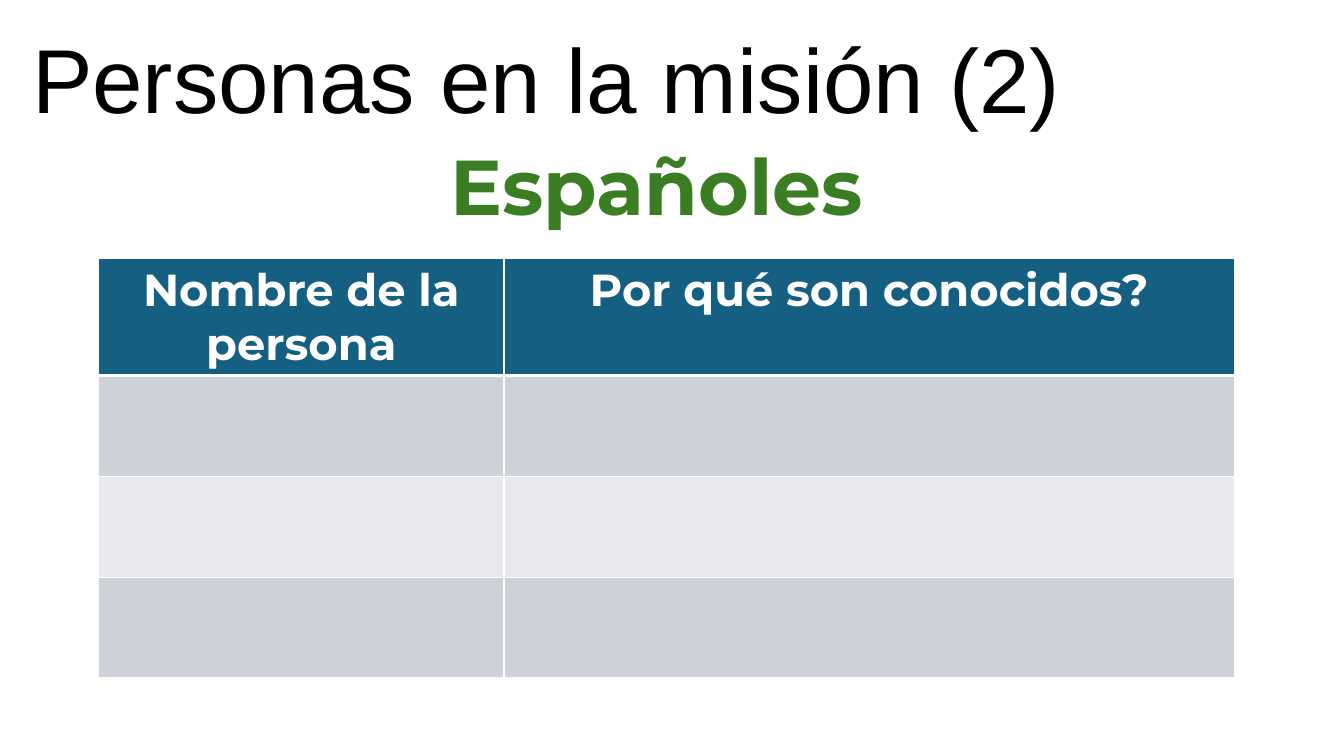
from lxml import etree
from pptx import Presentation
from pptx import util as u
from pptx.dml.color import RGBColor
from pptx.enum import text
from pptx.oxml import ns

BLACK = RGBColor(0x00, 0x00, 0x00)
WHITE = RGBColor(0xFF, 0xFF, 0xFF)
GREEN = RGBColor(0x3B, 0x7D, 0x23)
TEAL = RGBColor(0x15, 0x60, 0x82)
BANDS = (RGBColor(0xCC, 0xD2, 0xD8), RGBColor(0xE8, 0xEA, 0xED))


class SlideBuilder:
    """Holds the fonts and the current slide."""

    title_font = "Arial"
    accent_font = "Montserrat"

    def __init__(self, slide):
        self.slide = slide

    def styled_run(self, paragraph, words, font, size, color, bold=False):
        run = paragraph.add_run()
        run.text = words
        run.font.name = font
        run.font.size = u.Pt(size)
        run.font.bold = bold
        run.font.color.rgb = color

    def heading(self, words, box, font, size, color, anchor, align, spacing, bold=False):
        frame = self.slide.shapes.add_textbox(*(u.Cm(v) for v in box)).text_frame
        frame.word_wrap = True
        frame.vertical_anchor = anchor
        paragraph = frame.paragraphs[0]
        paragraph.alignment = align
        paragraph.line_spacing = spacing
        self.styled_run(paragraph, words, font, size, color, bold)
        return paragraph

    def border(self, cell, **widths):
        properties = cell._tc.get_or_add_tcPr()
        for side, width in widths.items():
            line = etree.SubElement(properties, ns.qn(f"a:ln{side}"), w=str(u.Pt(width)))
            fill = etree.SubElement(line, ns.qn("a:solidFill"))
            etree.SubElement(fill, ns.qn("a:srgbClr"), val=str(WHITE))

    def table(self, headers, left, top, widths, heights):
        grid = self.slide.shapes.add_table(
            len(heights), len(widths), u.Cm(left), u.Cm(top),
            u.Cm(sum(widths)), u.Cm(sum(heights))).table
        for column, width in zip(grid.columns, widths):
            column.width = u.Cm(width)
        for r, height in enumerate(heights):
            grid.rows[r].height = u.Cm(height)
            for cell in grid.rows[r].cells:
                # A thicker rule separates the header from the body
                self.border(cell, L=1, R=1, T=3 if r == 1 else 1, B=3 if r == 0 else 1)
                cell.fill.solid()
                cell.fill.fore_color.rgb = BANDS[(r - 1) % 2] if r else TEAL
        for cell, header in zip(grid.rows[0].cells, headers):
            paragraph = cell.text_frame.paragraphs[0]
            paragraph.alignment = text.PP_ALIGN.CENTER
            self.styled_run(paragraph, header, self.accent_font, 32, WHITE, bold=True)


def main():
    deck = Presentation()
    deck.slide_width, deck.slide_height = u.Cm(33.87), u.Cm(19.05)
    builder = SlideBuilder(deck.slides.add_slide(deck.slide_layouts[6]))

    # Title and group name
    builder.heading("Personas en la misión (2)", (0.56, 0.28, 32.87, 3.68),
                    builder.title_font, 64.8, BLACK,
                    text.MSO_ANCHOR.MIDDLE, text.PP_ALIGN.LEFT, 0.9)
    group = builder.heading("Españoles", (9.35, 3.63, 14.4, 2.29),
                            builder.accent_font, 55.5, GREEN,
                            text.MSO_ANCHOR.BOTTOM, text.PP_ALIGN.CENTER, 0.8, bold=True)
    group.space_before = u.Pt(10)

    # Table to fill in
    builder.table(("Nombre de la persona", "Por qué son conocidos?"),
                  2.49, 6.5, (10.21, 18.42), (2.95,) + (2.54,) * 3)

    deck.save("out.pptx")


if __name__ == "__main__":
    main()
